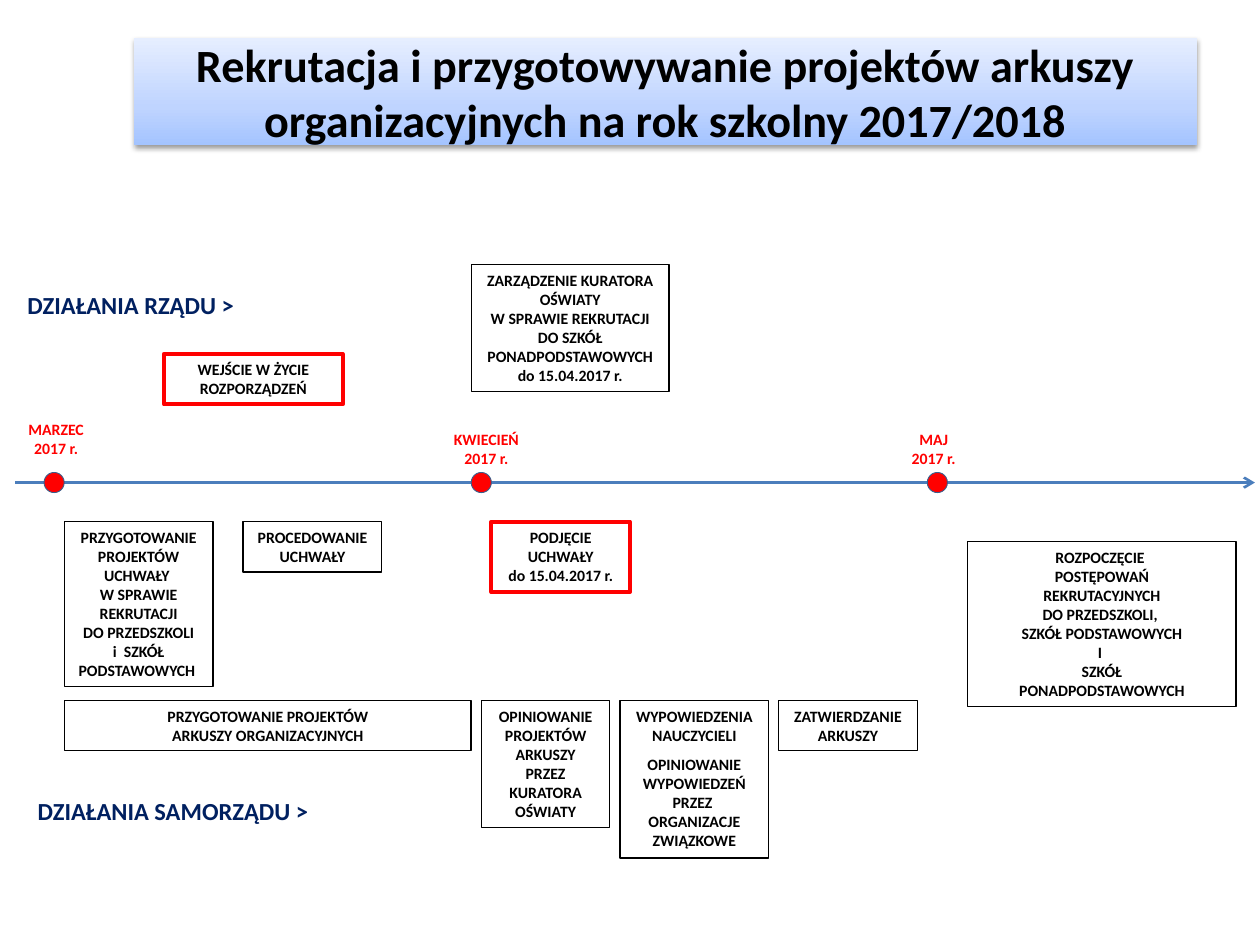
"""Build the recruitment timeline slide for the 2017/2018 school year."""
from pptx import Presentation
from pptx.dml.color import RGBColor
from pptx.enum.shapes import MSO_CONNECTOR, MSO_SHAPE
from pptx.enum.text import MSO_ANCHOR, MSO_AUTO_SIZE, PP_ALIGN
from pptx.oxml import parse_xml
from pptx.oxml.ns import nsdecls
from pptx.util import Inches, Pt

RED = RGBColor(0xFF, 0x00, 0x00)
BLACK = RGBColor(0x00, 0x00, 0x00)
NAVY = RGBColor(0x00, 0x20, 0x60)
BLUE = RGBColor(0x4B, 0x7E, 0xBC)
STEEL = RGBColor(0x3A, 0x5F, 0x8C)

SHINE = f"""<a:gradFill {nsdecls('a')} rotWithShape="1"><a:gsLst>
<a:gs pos="0"><a:srgbClr val="A4C4FF"/></a:gs>
<a:gs pos="35000"><a:srgbClr val="BFD4FF"/></a:gs>
<a:gs pos="100000"><a:srgbClr val="E6EEFF"/></a:gs>
</a:gsLst><a:lin ang="16200000" scaled="1"/></a:gradFill>"""
SHADE = f"""<a:effectLst {nsdecls('a')}>
<a:outerShdw blurRad="40000" dist="20000" dir="5400000" rotWithShape="0">
<a:srgbClr val="000000"><a:alpha val="38000"/></a:srgbClr></a:outerShdw></a:effectLst>"""
RECT = f'<a:prstGeom {nsdecls("a")} prst="rect"><a:avLst/></a:prstGeom>'
PLAIN = f"<a:effectLst {nsdecls('a')}/>"
ARROW = f'<a:tailEnd {nsdecls("a")} type="arrow"/>'

AXIS = 3.83
DOT = 0.16
ROW_ONE = 4.14
ROW_TWO = 5.56


class Painter:
    def __init__(self, slide):
        self.slide = slide
        self.shapes = slide.shapes
        self.font = {"name": "Calibri", "bold": True}

    def letter(self, shape, parts, size, color, align=PP_ALIGN.CENTER, wrap=True,
               fit=MSO_AUTO_SIZE.SHAPE_TO_FIT_TEXT, anchor=MSO_ANCHOR.TOP):
        frame = shape.text_frame
        form = {"word_wrap": wrap, "auto_size": fit, "vertical_anchor": anchor}
        for key, value in form.items():
            setattr(frame, key, value)
        for index, part in enumerate(parts):
            para = frame.add_paragraph() if index else frame.paragraphs[0]
            para.text = part
            para.alignment = align
            for run in para.runs:
                for key, value in {**self.font, "size": Pt(size)}.items():
                    setattr(run.font, key, value)
                run.font.color.rgb = color
        return frame

    def title(self, text, *place):
        shape = self.shapes.title
        sides = ("left", "top", "width", "height")
        for side, value in zip(sides, place):
            setattr(shape, side, Inches(value))
        for xml in (RECT, SHINE, SHADE):
            shape._element.spPr.append(parse_xml(xml))
        self.letter(shape, [text], 26.4, BLACK, fit=MSO_AUTO_SIZE.NONE,
                    anchor=MSO_ANCHOR.MIDDLE)

    def label(self, parts, size, color, *place, align=PP_ALIGN.CENTER):
        shape = self.shapes.add_textbox(*map(Inches, place))
        self.letter(shape, parts, size, color, align, wrap=False)

    def form(self, kind, place, line, width):
        shape = self.shapes.add_shape(kind, *map(Inches, place))
        shape.shadow.inherit = False
        shape.line.color.rgb = line
        shape.line.width = Pt(width)
        return shape

    def box(self, parts, *place, key=False):
        line, width = (RED, 2.25) if key else (BLACK, 0.75)
        shape = self.form(MSO_SHAPE.RECTANGLE, place, line, width)
        shape.fill.background()
        return self.letter(shape, parts, 9, BLACK)

    def dot(self, left):
        place = (left, AXIS - DOT / 2, DOT, DOT)
        shape = self.form(MSO_SHAPE.FLOWCHART_CONNECTOR, place, STEEL, 0.5)
        shape.fill.solid()
        shape.fill.fore_color.rgb = RED

    def arrow(self, start, end, level):
        points = map(Inches, (start, level, end, level))
        line = self.shapes.add_connector(MSO_CONNECTOR.STRAIGHT, *points)
        line.line.color.rgb = BLUE
        line.line.width = Pt(1.5)
        props = line._element.spPr
        props.ln.append(parse_xml(ARROW))
        props.append(parse_xml(PLAIN))


def main():
    deck = Presentation()
    deck.slide_width, deck.slide_height = Inches(10), Inches(7.5)
    pen = Painter(deck.slides.add_slide(deck.slide_layouts[5]))

    pen.title("Rekrutacja i przygotowywanie projektów arkuszy "
              "organizacyjnych na rok szkolny 2017/2018", 1.06, 0.3, 8.44, 0.85)
    pen.arrow(0.12, 9.96, AXIS)

    for text, left, top, width in (("DZIAŁANIA RZĄDU >", 0.12, 2.25, 1.9),
                                   ("DZIAŁANIA SAMORZĄDU >", 0.2, 6.27, 2.42)):
        pen.label([text], 14, NAVY, left, top, width, 0.34, align=PP_ALIGN.LEFT)

    for month, spot, left, top, width in (("MARZEC", 0.35, 0.12, 3.28, 0.65),
                                          ("KWIECIEŃ", 3.74, 3.5, 3.36, 0.72),
                                          ("MAJ", 7.36, 7.13, 3.36, 0.56)):
        pen.dot(spot)
        pen.label([month, "2017 r."], 9, RED, left, top, width, 0.4)

    pen.box(["WEJŚCIE W ŻYCIE ROZPORZĄDZEŃ"], 1.3, 2.81, 1.42, 0.4, key=True)
    pen.box(["ZARZĄDZENIE KURATORA OŚWIATY",
             "W SPRAWIE REKRUTACJI\nDO SZKÓŁ\nPONADPODSTAWOWYCH",
             "do 15.04.2017 r."], 3.74, 2.1, 1.57, 1.01)

    pen.box(["PRZYGOTOWANIE", "PROJEKTÓW UCHWAŁY \nW SPRAWIE", "REKRUTACJI",
             "DO PRZEDSZKOLI\ni  SZKÓŁ\nPODSTAWOWYCH "], 0.51, ROW_ONE, 1.18, 1.31)
    pen.box(["PROCEDOWANIE UCHWAŁY"], 1.93, ROW_ONE, 1.1, 0.4)
    pen.box(["PODJĘCIE UCHWAŁY", "do 15.04.2017 r."],
            3.9, ROW_ONE, 1.1, 0.56, key=True)
    pen.box(["ROZPOCZĘCIE \nPOSTĘPOWAŃ", "REKRUTACYJNYCH\nDO PRZEDSZKOLI, ",
             "SZKÓŁ PODSTAWOWYCH\nI \nSZKÓŁ\nPONADPODSTAWOWYCH"],
            7.68, 4.3, 2.13, 1.31)

    pen.box(["PRZYGOTOWANIE PROJEKTÓW", "ARKUSZY ORGANIZACYJNYCH"],
            0.51, ROW_TWO, 3.23, 0.4)
    pen.box(["OPINIOWANIE\nPROJEKTÓW", "ARKUSZY", "PRZEZ", "KURATORA OŚWIATY"],
            3.82, ROW_TWO, 1.02, 1.01)
    notice = pen.box(["WYPOWIEDZENIA", "NAUCZYCIELI", "OPINIOWANIE", "WYPOWIEDZEŃ",
                      "PRZEZ ", "ORGANIZACJE ZWIĄZKOWE"], 4.92, ROW_TWO, 1.18, 1.25)
    notice.paragraphs[2].space_before = Pt(6)
    pen.box(["ZATWIERDZANIE ARKUSZY"], 6.18, ROW_TWO, 1.1, 0.4)

    deck.save("out.pptx")


if __name__ == "__main__":
    main()
